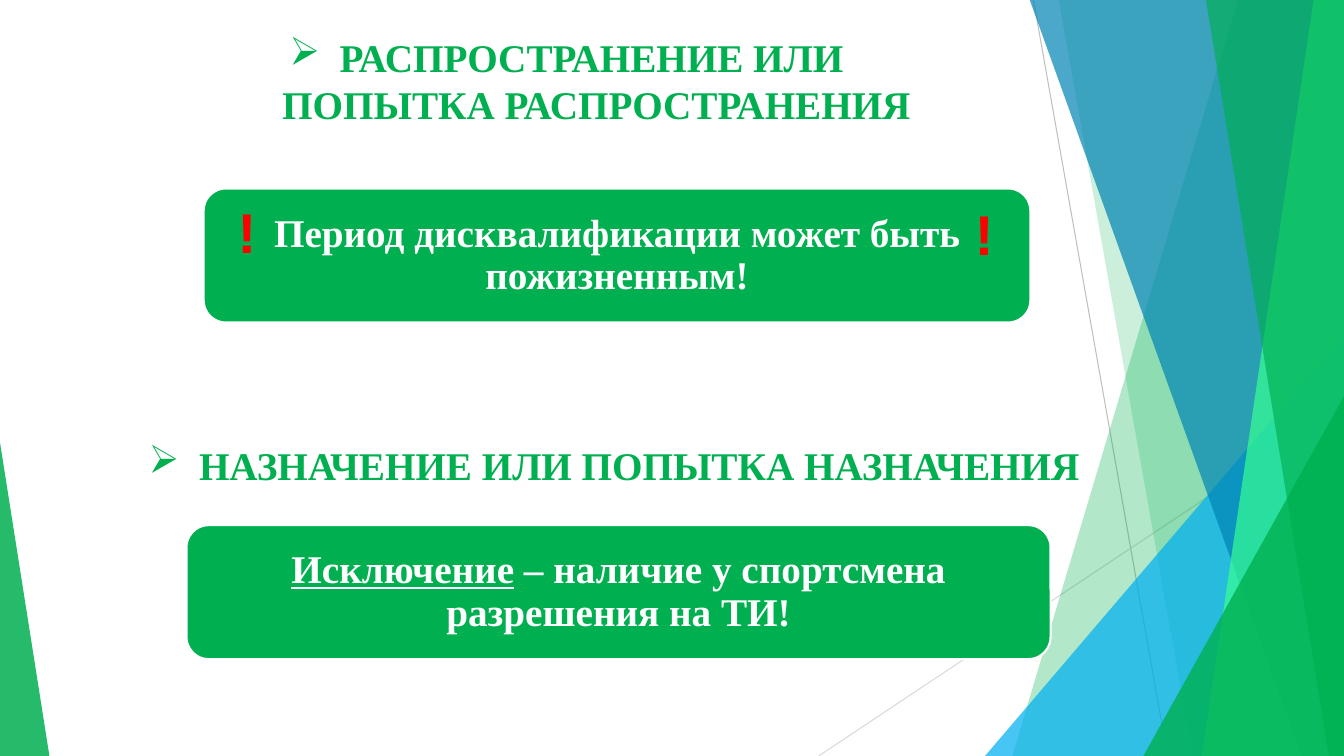
from dataclasses import dataclass

from lxml.etree import SubElement
from pptx import Presentation
from pptx.dml.color import RGBColor
from pptx.enum.shapes import MSO_CONNECTOR, MSO_SHAPE
from pptx.enum.text import MSO_ANCHOR, PP_ALIGN
from pptx.oxml.ns import qn
from pptx.util import Pt

EMU_PER_PX = 9144
SLIDE_WIDTH, SLIDE_HEIGHT = 1333, 750
GREEN, WHITE, RED = "00B050", "FFFFFF", "FF0000"
SERIF = "Times New Roman"


@dataclass
class Ray:
    start: tuple[int, int]
    end: tuple[int, int]
    color: str


@dataclass
class Facet:
    top_left: int
    bottom_left: int
    color: str
    opacity: int


@dataclass
class Corner:
    box: tuple[int, int, int, int]
    apex: int
    color: str
    opacity: int


@dataclass
class Heading:
    box: tuple[int, int, int, int]
    anchor: MSO_ANCHOR
    lines: list[str]


@dataclass
class Banner:
    box: tuple[int, int, int, int]
    underlined: str
    text: str


def px(length: int) -> int:
    return length * EMU_PER_PX


def rgb(color: str) -> RGBColor:
    return RGBColor.from_string(color)


def paint(shape, color: str, opacity: int = 100) -> None:
    shape.shadow.inherit = False
    shape.fill.solid()
    shape.fill.fore_color.rgb = rgb(color)
    shape.line.fill.background()
    if opacity < 100:
        fill_color = shape._element.spPr.find(qn("a:solidFill"))[0]
        SubElement(fill_color, qn("a:alpha"), val=str(opacity * 1000))


def draw_ray(shapes, ray: Ray) -> None:
    line = shapes.add_connector(
        MSO_CONNECTOR.STRAIGHT, *map(px, ray.start + ray.end))
    line.line.color.rgb = rgb(ray.color)
    line.line.width = Pt(0.75)
    SubElement(line._element.spPr, qn("a:effectLst"))


def draw_facet(shapes, facet: Facet) -> None:
    outline = shapes.build_freeform(facet.top_left, -1, scale=EMU_PER_PX)
    outline.add_line_segments([
        (SLIDE_WIDTH, -1), (SLIDE_WIDTH, SLIDE_HEIGHT),
        (facet.bottom_left, SLIDE_HEIGHT)], close=True)
    paint(outline.convert_to_shape(), facet.color, facet.opacity)


def draw_corner(shapes, corner: Corner) -> None:
    triangle = shapes.add_shape(
        MSO_SHAPE.ISOSCELES_TRIANGLE, *map(px, corner.box))
    triangle.adjustments[0] = corner.apex
    paint(triangle, corner.color, corner.opacity)


def add_run(paragraph, text: str, color: str, size: int = 28,
            font: str = SERIF, underline: bool = False) -> None:
    run = paragraph.add_run()
    run.text = text
    run.font.name = font
    run.font.size = Pt(size)
    run.font.bold = True
    run.font.underline = underline
    run.font.color.rgb = rgb(color)


def draw_heading(shapes, heading: Heading) -> None:
    frame = shapes.add_textbox(*map(px, heading.box)).text_frame
    frame.word_wrap = True
    frame.vertical_anchor = heading.anchor
    paragraph = frame.paragraphs[0]
    paragraph.alignment = PP_ALIGN.CENTER
    properties = paragraph._p.get_or_add_pPr()
    properties.set("marL", str(px(50)))
    properties.set("indent", str(px(-50)))
    SubElement(properties, qn("a:buChar"), char="➢")
    for number, line in enumerate(heading.lines):
        if number:
            paragraph.add_line_break()
        add_run(paragraph, line, GREEN)


def draw_banner(shapes, banner: Banner) -> None:
    panel = shapes.add_shape(
        MSO_SHAPE.ROUNDED_RECTANGLE, *map(px, banner.box))
    paint(panel, GREEN)
    panel.line.color.rgb = rgb(WHITE)
    panel.line.width = Pt(1.5)
    frame = panel.text_frame
    frame.word_wrap = True
    frame.vertical_anchor = MSO_ANCHOR.MIDDLE
    frame.margin_left = frame.margin_right = px(14)
    frame.margin_top = frame.margin_bottom = px(14)
    paragraph = frame.paragraphs[0]
    paragraph.alignment = PP_ALIGN.CENTER
    paragraph.line_spacing = 0.9
    if banner.underlined:
        add_run(paragraph, banner.underlined, WHITE, underline=True)
    add_run(paragraph, banner.text, WHITE)


def draw_warning(shapes, left: int, top: int) -> None:
    frame = shapes.add_textbox(*map(px, (left, top, 47, 77))).text_frame
    frame.word_wrap = True
    add_run(frame.paragraphs[0], "!", RED, size=40, font="Arial")


RAYS = [
    Ray((1025, 0), (1158, 750), "BFBFBF"),
    Ray((1333, 403), (812, 750), "D9D9D9"),
]
BACKDROP = [
    Facet(1228, 1004, GREEN, 30),
    Facet(1050, 1183, GREEN, 20),
    Corner((977, 333, 356, 417), 1, "00B0F0", 72),
    Facet(1021, 1291, "0084B4", 70),
    Facet(1303, 1192, "37FF92", 70),
    Facet(1196, 1318, GREEN, 65),
    Corner((1134, 393, 199, 357), 1, GREEN, 80),
    Corner((0, 439, 49, 311), 0, GREEN, 85),
]
HEADINGS = [
    Heading((-34, 28, 1201, 94), MSO_ANCHOR.TOP,
            ["РАСПРОСТРАНЕНИЕ ИЛИ ", "ПОПЫТКА РАСПРОСТРАНЕНИЯ"]),
    Heading((52, 406, 1114, 110), MSO_ANCHOR.MIDDLE,
            ["НАЗНАЧЕНИЕ ИЛИ ПОПЫТКА НАЗНАЧЕНИЯ"]),
]
BANNERS = [
    Banner((202, 187, 820, 133), "",
           "Период дисквалификации может быть пожизненным!"),
    Banner((185, 521, 857, 133), "Исключение",
           " – наличие у спортсмена разрешения на ТИ!"),
]
WARNINGS = [(226, 191), (957, 193)]


def main() -> None:
    deck = Presentation()
    deck.slide_width, deck.slide_height = px(SLIDE_WIDTH), px(SLIDE_HEIGHT)
    shapes = deck.slides.add_slide(deck.slide_layouts[6]).shapes
    for ray in RAYS:
        draw_ray(shapes, ray)
    for piece in BACKDROP:
        if isinstance(piece, Facet):
            draw_facet(shapes, piece)
        else:
            draw_corner(shapes, piece)
    for heading in HEADINGS:
        draw_heading(shapes, heading)
    for banner in BANNERS:
        draw_banner(shapes, banner)
    for left, top in WARNINGS:
        draw_warning(shapes, left, top)
    deck.save("out.pptx")


if __name__ == "__main__":
    main()
